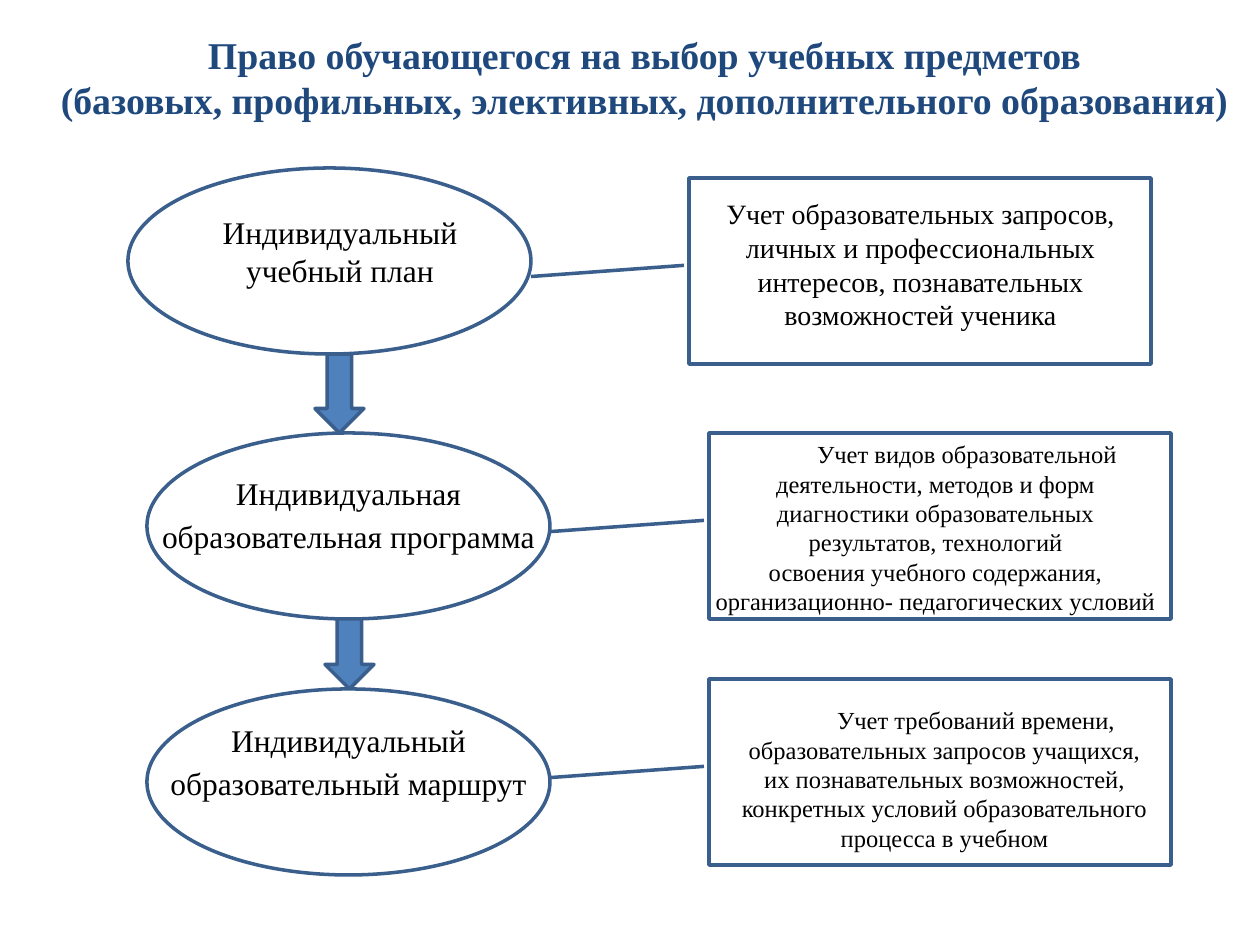
from pptx import Presentation
from pptx import util as u
from pptx.dml.color import RGBColor
from pptx.enum import shapes, text

PX = u.Inches(1) / 126
FONT = "Times New Roman"
COLORS = {"title": "1F497D", "text": "000000", "line": "3A5F8C", "arrow": "4F81BD"}

# Content: wording, text box (left, top, width, height) and text settings
TITLE = ("Право обучающегося на выбор учебных предметов\n"
         "(базовых, профильных, элективных, дополнительного образования)")
STAGES = [
    ("Индивидуальный учебный план", (207, 207, 266, 89), {}),
    ("Индивидуальная образовательная программа", (147, 462, 403, 139), {"spacing": 1.15}),
    ("Индивидуальный образовательный маршрут", (147, 709, 403, 101), {"spacing": 1.15}),
]
FACTORS = [
    ("Учет образовательных запросов, личных и профессиональных интересов, "
     "познавательных возможностей ученика",
     (709, 197, 423, 145), {"size": 16, "inset": (0, 0, 0, 0)}),
    ("Учет видов образовательной деятельности, методов и форм диагностики "
     "образовательных результатов, технологий\n"
     "освоения учебного содержания, организационно- педагогических условий",
     (699, 433, 473, 190), {"size": 14, "indent": 63}),
    ("Учет требований времени, образовательных запросов учащихся, их познавательных "
     "возможностей, конкретных условий образовательного процесса в учебном",
     (728, 699, 433, 161), {"size": 14, "indent": 63}),
]

# Layout in px
OVAL_W, OVAL_H = 403, 186
OVALS = [(128, 168), (147, 433), (147, 689)]
CALLOUT_W, CALLOUT_H = 462, 186
CALLOUTS = [(689, 178), (709, 433), (709, 679)]
CALLOUT_LEADER = (0.47, -0.011, 0.53, -0.342)
ARROW_W = 49
ARROW_LEFTS = [315, 325]


def emu(px):
    return u.Emu(round(px * PX))


def color(name):
    return RGBColor.from_string(COLORS[name])


def add_outline(slide, kind, box, fill=None):
    shape = slide.shapes.add_shape(kind, *map(emu, box))
    shape.shadow.inherit = False
    if fill:
        shape.fill.solid()
        shape.fill.fore_color.rgb = color(fill)
    else:
        shape.fill.background()
    shape.line.color.rgb = color("line")
    shape.line.width = u.Pt(2)
    return shape


def add_text(slide, wording, box, size=18, ink="text", bold=False, spacing=None,
             indent=0, inset=None, anchor=text.MSO_ANCHOR.TOP):
    frame = slide.shapes.add_textbox(*map(emu, box)).text_frame
    frame.word_wrap = True
    frame.vertical_anchor = anchor
    if inset:
        (frame.margin_left, frame.margin_top,
         frame.margin_right, frame.margin_bottom) = map(emu, inset)
    paragraph = frame.paragraphs[0]
    paragraph.alignment = text.PP_ALIGN.CENTER
    if spacing:
        paragraph.line_spacing = spacing
    if indent:
        properties = paragraph._p.get_or_add_pPr()
        properties.set("marL", "0")
        properties.set("indent", str(emu(indent)))
        paragraph.space_after = u.Pt(10)
    for number, line in enumerate(wording.split("\n")):
        if number:
            paragraph.add_line_break()
        run = paragraph.add_run()
        run.text = line
        run.font.name = FONT
        run.font.size = u.Pt(size)
        run.font.bold = bold
        run.font.color.rgb = color(ink)


def main():
    deck = Presentation()
    deck.slide_width, deck.slide_height = emu(1260), emu(945)
    slide = deck.slides.add_slide(deck.slide_layouts[6])

    # Title
    add_text(slide, TITLE, (29, 38, 1231, 158), size=21.6, ink="title", bold=True,
             inset=(12, 0, 12, 80), anchor=text.MSO_ANCHOR.MIDDLE)

    # Stages in ovals
    for (left, top), (wording, box, style) in zip(OVALS, STAGES):
        add_outline(slide, shapes.MSO_SHAPE.OVAL, (left, top, OVAL_W, OVAL_H))
        add_text(slide, wording, box, **style)

    # Factors in callouts whose leaders point to the ovals
    for (left, top), (wording, box, style) in zip(CALLOUTS, FACTORS):
        callout = add_outline(slide, shapes.MSO_SHAPE.LINE_CALLOUT_1,
                              (left, top, CALLOUT_W, CALLOUT_H))
        for index, value in enumerate(CALLOUT_LEADER):
            callout.adjustments[index] = value
        add_text(slide, wording, box, **style)

    # Arrows filling the gaps between ovals
    for left, (_, upper), (_, lower) in zip(ARROW_LEFTS, OVALS, OVALS[1:]):
        start = upper + OVAL_H
        add_outline(slide, shapes.MSO_SHAPE.DOWN_ARROW,
                    (left, start, ARROW_W, lower - start), fill="arrow")

    deck.save("out.pptx")


if __name__ == "__main__":
    main()
